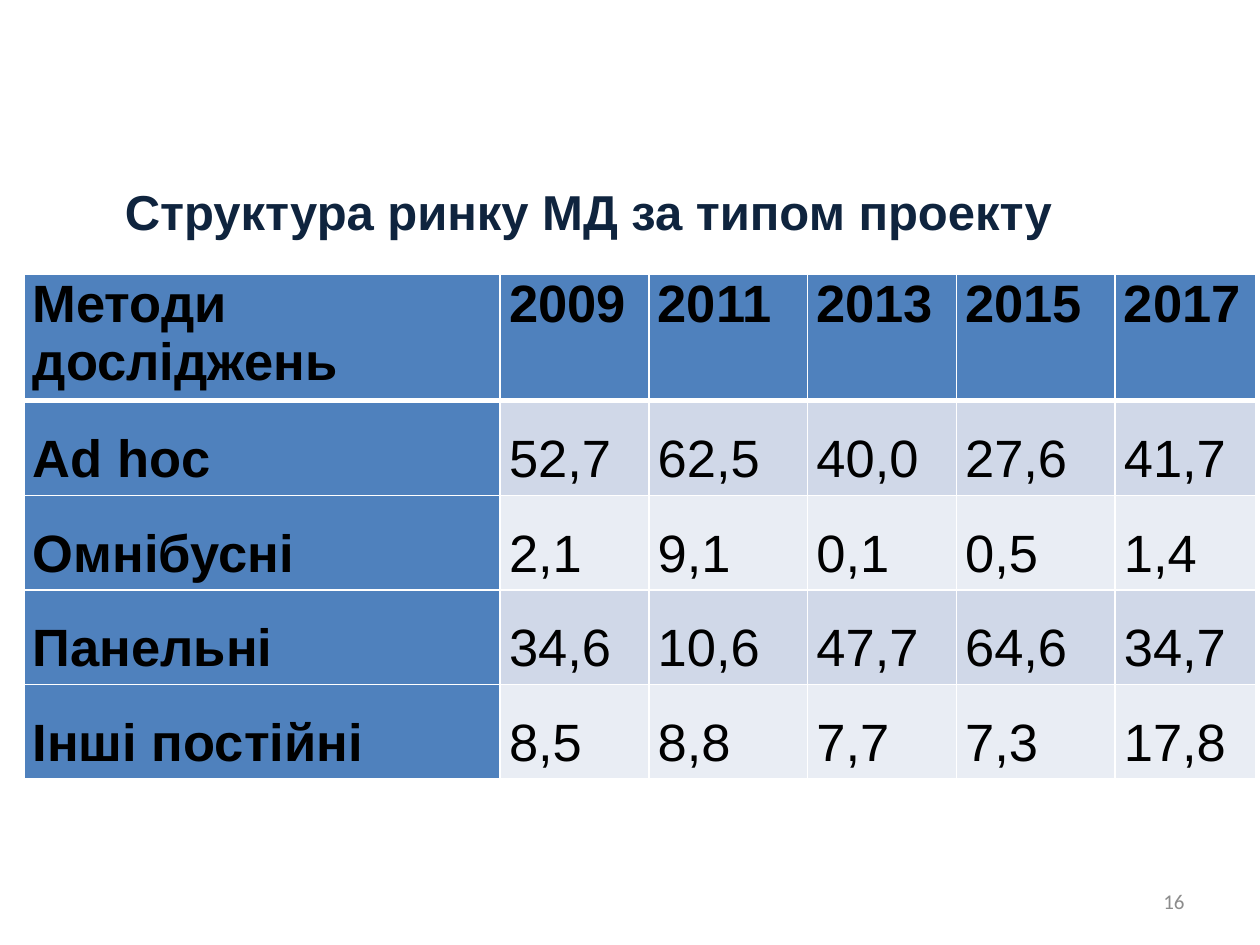
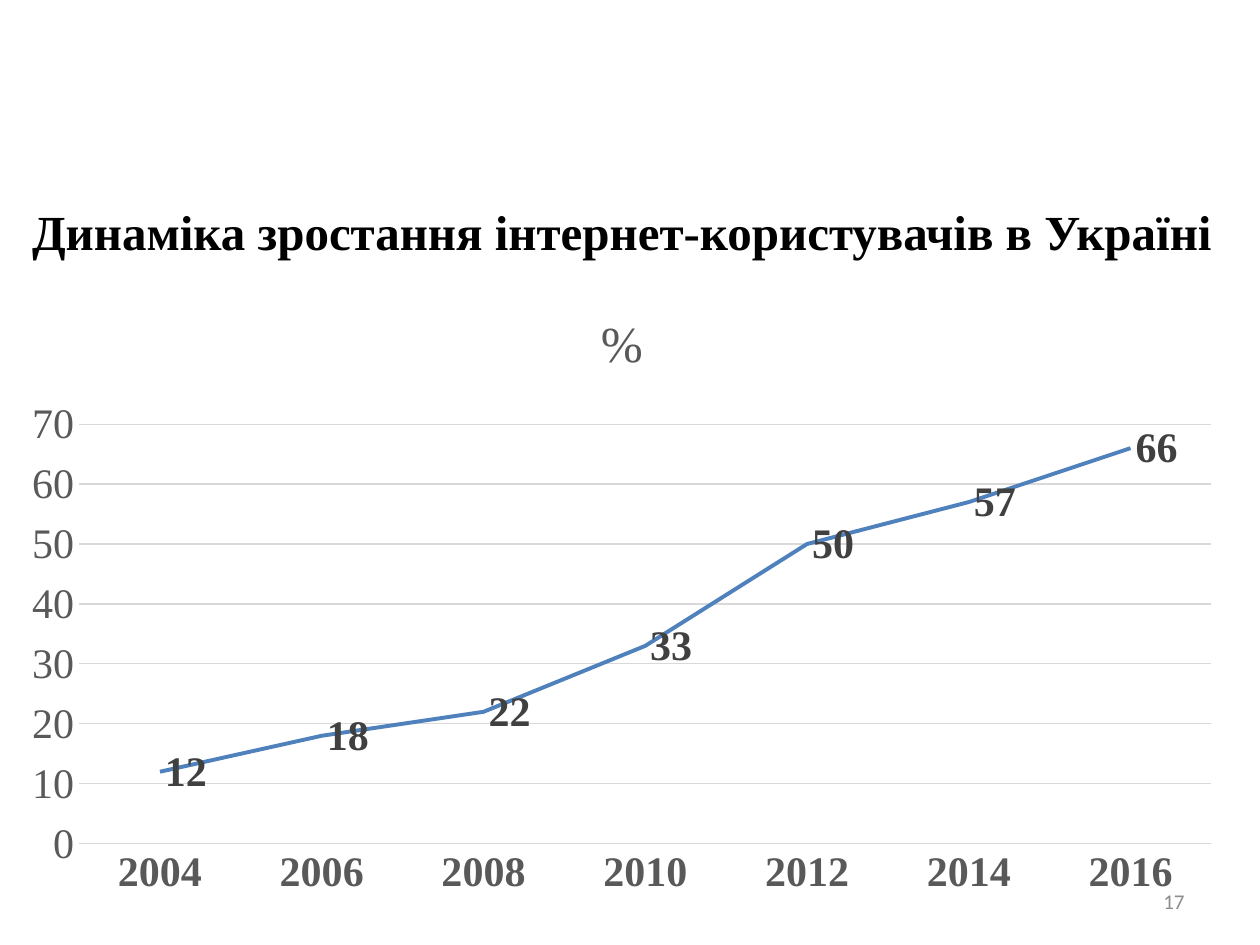
from dataclasses import dataclass

from lxml import etree
from pptx import Presentation
from pptx import util as u
from pptx.chart.data import CategoryChartData
from pptx.dml.color import RGBColor
from pptx.enum import chart as chart_enum
from pptx.enum import text as text_enum
from pptx.oxml.ns import qn


@dataclass(frozen=True)
class Theme:
    accent: str = "4F81BD"
    bands: tuple = ("D0D8E8", "E9EDF4")
    white: str = "FFFFFF"
    black: str = "000000"
    navy: str = "0F243E"
    number_gray: str = "8C8C8C"
    axis_gray: str = "595959"
    label_gray: str = "404040"
    grid_gray: str = "D9D9D9"
    sans: str = "Arial"
    serif: str = "Times New Roman"
    number_font: str = "Calibri"
    title_size: float = 28
    table_size: float = 30
    chart_size: float = 24
    chart_title_size: float = 28.8
    number_size: float = 12


THEME = Theme()
ALIGN = text_enum.PP_ALIGN
ANCHOR = text_enum.MSO_ANCHOR

# The slide is a grid of 100 columns and 75 rows.
UNIT = u.Inches(0.1)
COLUMNS, ROWS = 100, 75
NUMBER_BOX = (71.7, 69.5, 23.3, 4)
TITLE_HEIGHT = 5.7

METHODS_HEADER = ["Методи досліджень", "2009", "2011", "2013", "2015", "2017"]
METHODS_ROWS = [
    ["Ad hoc", "52,7", "62,5", "40,0", "27,6", "41,7"],
    ["Омнібусні", "2,1", "9,1", "0,1", "0,5", "1,4"],
    ["Панельні", "34,6", "10,6", "47,7", "64,6", "34,7"],
    ["Інші постійні", "8,5", "8,8", "7,7", "7,3", "17,8"],
]
METHODS_COLUMNS = [37.8, 11.8, 12.6, 11.8, 12.6, 11.2]
HEADER_HEIGHT, ROW_HEIGHT = 9.9, 7.5

INTERNET_USERS = {"2004": 12, "2006": 18, "2008": 22, "2010": 33,
                  "2012": 50, "2014": 57, "2016": 66}


def grid(*lengths):
    return [u.Emu(round(length * UNIT)) for length in lengths]


def color(value):
    return RGBColor.from_string(value)


def format_font(font, *, name, size, fill, bold=False):
    font.name = name
    font.size = u.Pt(size)
    font.bold = bold
    font.color.rgb = color(fill)


def write_text(frame, text, *, align=ALIGN.LEFT, spacing=None, **font):
    paragraph = frame.paragraphs[0]
    paragraph.alignment = align
    if spacing:
        paragraph.line_spacing = spacing
    run = paragraph.add_run()
    run.text = text
    format_font(run.font, **font)


def add_text(slide, box, text, *, anchor=ANCHOR.TOP, **style):
    frame = slide.shapes.add_textbox(*grid(*box)).text_frame
    frame.word_wrap = True
    frame.vertical_anchor = anchor
    write_text(frame, text, **style)


def add_title(slide, box, text, name, fill):
    add_text(slide, box, text, align=ALIGN.CENTER, name=name,
             size=THEME.title_size, fill=fill, bold=True)


def add_numbered_slide(presentation, number):
    slide = presentation.slides.add_slide(presentation.slide_layouts[6])
    add_text(slide, NUMBER_BOX, str(number), anchor=ANCHOR.MIDDLE, align=ALIGN.RIGHT,
             name=THEME.number_font, size=THEME.number_size, fill=THEME.number_gray)
    return slide


def set_borders(cell, **widths):
    """Draw white cell borders; widths in points are keyed L, R, T and B."""
    properties = cell._tc.get_or_add_tcPr()
    for index, side in enumerate("LRTB"):
        line = etree.Element(qn(f"a:ln{side}"), w=str(u.Pt(widths.get(side, 1))))
        fill = etree.SubElement(line, qn("a:solidFill"))
        etree.SubElement(fill, qn("a:srgbClr"), val=THEME.white)
        properties.insert(index, line)


def fill_cell(cell, text, fill, *, bold, spacing=None, **borders):
    cell.margin_left = cell.margin_right = u.Inches(0.07)
    cell.margin_top = cell.margin_bottom = 0
    cell.fill.solid()
    cell.fill.fore_color.rgb = color(fill)
    set_borders(cell, **borders)
    write_text(cell.text_frame, text, spacing=spacing, name=THEME.sans,
               size=THEME.table_size, fill=THEME.black, bold=bold)


def add_methods_table(slide, left, top):
    heights = [HEADER_HEIGHT] + [ROW_HEIGHT] * len(METHODS_ROWS)
    box = grid(left, top, sum(METHODS_COLUMNS), sum(heights))
    table = slide.shapes.add_table(len(heights), len(METHODS_COLUMNS), *box).table
    table.first_col = True
    for column, width in zip(table.columns, grid(*METHODS_COLUMNS)):
        column.width = width
    for row, height in zip(table.rows, grid(*heights)):
        row.height = height

    for column, text in enumerate(METHODS_HEADER):
        fill_cell(table.cell(0, column), text, THEME.accent, bold=True, B=3)
    for row, values in enumerate(METHODS_ROWS, start=1):
        band = THEME.bands[(row - 1) % 2]
        for column, text in enumerate(values):
            is_name = column == 0
            fill_cell(table.cell(row, column), text, THEME.accent if is_name else band,
                      bold=is_name, spacing=1.5, T=3 if row == 1 else 1)


def format_line(line, fill, width):
    line.color.rgb = color(fill)
    line.width = u.Pt(width)


def format_axes(chart):
    for axis, bold in ((chart.category_axis, True), (chart.value_axis, False)):
        axis.major_tick_mark = axis.minor_tick_mark = chart_enum.XL_TICK_MARK.NONE
        format_font(axis.tick_labels.font, name=THEME.serif, size=THEME.chart_size,
                    fill=THEME.axis_gray, bold=bold)
    format_line(chart.category_axis.format.line, THEME.grid_gray, 0.75)
    values = chart.value_axis
    values.minimum_scale, values.maximum_scale, values.major_unit = 0, 70, 10
    values.format.line.fill.background()
    format_line(values.major_gridlines.format.line, THEME.grid_gray, 0.75)


def add_users_chart(slide, box):
    data = CategoryChartData()
    data.categories = list(INTERNET_USERS)
    data.add_series("%", list(INTERNET_USERS.values()))
    chart = slide.shapes.add_chart(chart_enum.XL_CHART_TYPE.LINE, *grid(*box), data).chart
    format_font(chart.font, name=THEME.serif, size=THEME.chart_size, fill=THEME.black)
    chart.has_legend = False
    write_text(chart.chart_title.text_frame, "%", align=ALIGN.CENTER, name=THEME.serif,
               size=THEME.chart_title_size, fill=THEME.axis_gray)
    chart.chart_title.include_in_layout = False
    format_axes(chart)

    plot = chart.plots[0]
    plot.vary_by_categories = False
    series = plot.series[0]
    series.smooth = False
    series.marker.style = chart_enum.XL_MARKER_STYLE.NONE
    format_line(series.format.line, THEME.accent, 2.25)
    labels = series.data_labels
    labels.show_value = True
    labels.position = chart_enum.XL_LABEL_POSITION.RIGHT
    format_font(labels.font, name=THEME.serif, size=THEME.chart_size,
                fill=THEME.label_gray, bold=True)


def build_methods_slide(presentation, number):
    slide = add_numbered_slide(presentation, number)
    add_title(slide, (2.8, 13.9, 87.8, TITLE_HEIGHT), "Структура ринку МД за типом проекту",
              THEME.sans, THEME.navy)
    add_methods_table(slide, left=1.9, top=21.8)


def build_users_slide(presentation, number):
    slide = add_numbered_slide(presentation, number)
    left, width = 0.6, 97.5
    add_title(slide, (left, 15.5, width, TITLE_HEIGHT),
              "Динаміка зростання інтернет-користувачів в Україні",
              THEME.serif, THEME.black)
    add_users_chart(slide, (left, 22.5, width, 49.6))


def main():
    presentation = Presentation()
    presentation.slide_width, presentation.slide_height = grid(COLUMNS, ROWS)
    for number, build in enumerate((build_methods_slide, build_users_slide), start=16):
        build(presentation, number)
    presentation.save("out.pptx")


if __name__ == "__main__":
    main()
